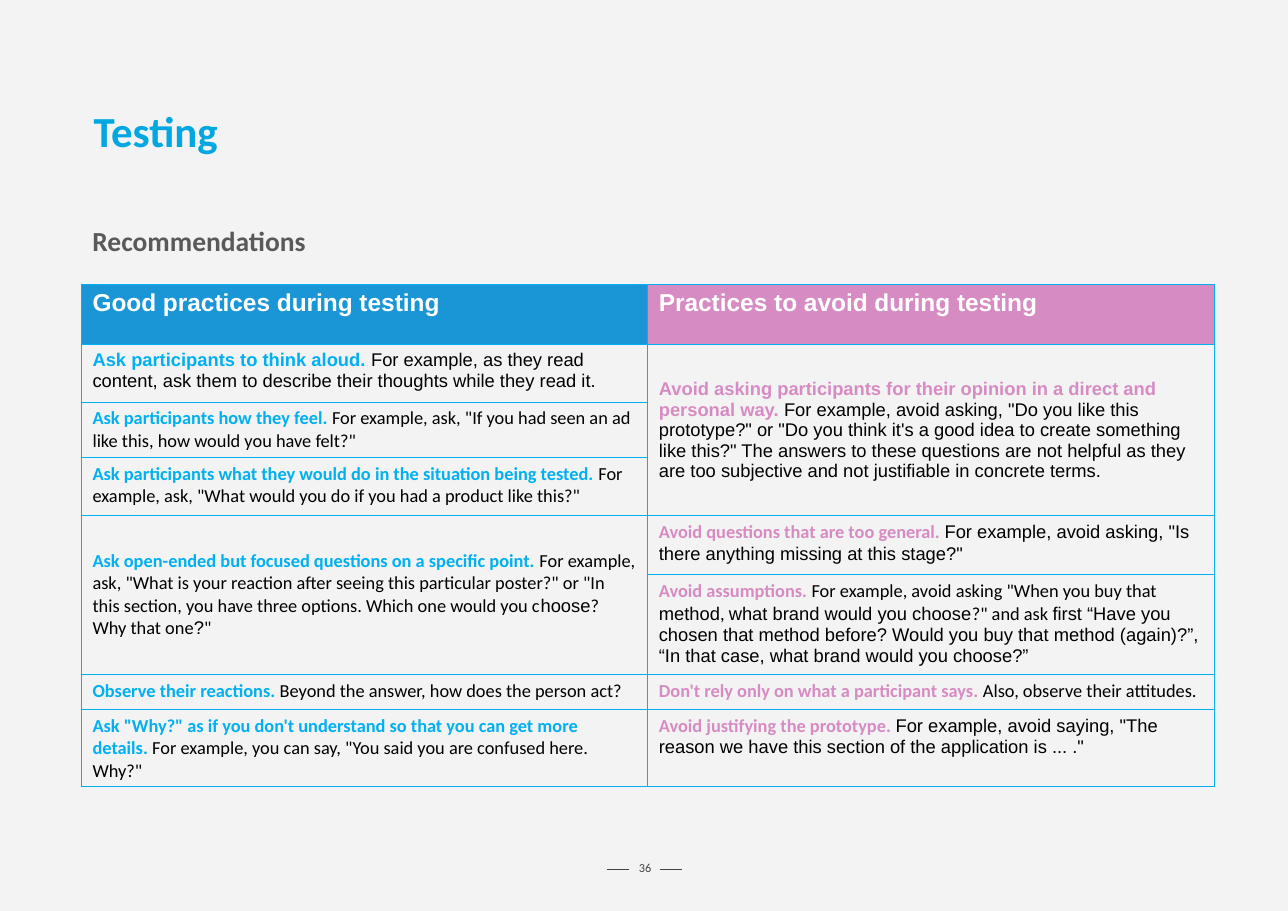
import dataclasses

import pptx
import pptx.dml.color
import pptx.enum.shapes
import pptx.enum.text
import pptx.oxml.ns
import pptx.util
from lxml import etree

Inches = pptx.util.Inches
ANCHOR = pptx.enum.text.MSO_ANCHOR
ALIGN = pptx.enum.text.PP_ALIGN


@dataclasses.dataclass(frozen=True)
class Theme:
    background: str = "F3F3F3"
    title: str = "00A7E1"
    subtitle: str = "595959"
    footer: str = "434343"
    body: str = "000000"
    white: str = "FFFFFF"
    good: str = "00B0F0"
    good_header: str = "1A96D7"
    avoid: str = "D78BC3"
    border: str = "00B0F0"
    sans: str = "Arial"
    humanist: str = "Calibri"
    title_size: int = 28
    subtitle_size: int = 18
    header_size: int = 16
    body_size: int = 12
    footer_size: int = 8
    line_width: float = 0.75


THEME = Theme()
SANS, HUMANIST = THEME.sans, THEME.humanist

COLUMN_WIDTH = 5.14
ROW_HEIGHTS = [0.55, 0.52, 0.49, 0.53, 0.54, 0.55, 0.32, 0.67]

# Each practice: first row, rows spanned, font of the lead, lead, then (text, font) runs.
GOOD_PRACTICES = [
    (1, 1, SANS, "Ask participants to think aloud. ", [
        ("For example, as they read content, ask them to describe their thoughts "
         "while they read it.", SANS)]),
    (2, 1, HUMANIST, "Ask participants how they feel. ", [
        ('For example, ask, "If you had seen an ad like this, how would you have felt?"',
         HUMANIST)]),
    (3, 1, HUMANIST, "Ask participants what they would do in the situation being tested. ", [
        ('For example, ask, "What would you do if you had a product like this?"', HUMANIST)]),
    (4, 2, HUMANIST, "Ask open-ended but focused questions on a specific point. ", [
        ('For example, ask, "What is your reaction after seeing this particular poster?" or '
         '"In this section, you have three options. Which one would you c', HUMANIST),
        ("hoose", SANS), ("? Why that one", HUMANIST), ("?", SANS), ('"', HUMANIST)]),
    (6, 1, HUMANIST, "Observe their reactions. ", [
        ("Beyond the answer, how does the person act?", HUMANIST)]),
    (7, 1, HUMANIST,
     'Ask "Why?" as if you don\'t understand so that you can get more details. ', [
         ('For example, you can say, "You said you are confused here. Why?"', HUMANIST)]),
]
PRACTICES_TO_AVOID = [
    (1, 3, SANS,
     "Avoid asking participants for their opinion in a direct and personal way. ", [
         ('For example, avoid asking, "Do you like this prototype?" or "Do you think it\'s a '
          'good idea to create something like this?" The answers to these questions are not '
          "helpful as they are too subjective and not justifiable in concrete terms.", SANS)]),
    (4, 1, HUMANIST, "Avoid questions that are too general. ", [
        ('For example, avoid asking, "Is there anything missing at this stage?"', SANS)]),
    (5, 1, HUMANIST, "Avoid assumptions. ", [
        ('For example, avoid asking "When you buy that ', HUMANIST), ("method", SANS),
        (", ", HUMANIST), ("what brand would you choose", SANS), ('?" and ask ', HUMANIST),
        ("first “Have you chosen that method before? Would you buy that method (again)?”, "
         "“In that case, what brand would you choose?”", SANS)]),
    (6, 1, HUMANIST, "Don't rely only on what a participant says. ", [
        ("Also, observe their attitudes.", HUMANIST)]),
    (7, 1, HUMANIST, "Avoid justifying the prototype. ", [
        ('For example, avoid saying, "The reason we have this section of the application '
         'is ... ."', SANS)]),
]
COLUMNS = [
    ("Good practices during testing", THEME.good_header, THEME.good, GOOD_PRACTICES),
    ("Practices to avoid during testing", THEME.avoid, THEME.avoid, PRACTICES_TO_AVOID),
]


def rgb(color):
    return pptx.dml.color.RGBColor.from_string(color)


def write(paragraph, text, *, font=HUMANIST, size=THEME.body_size, color=THEME.body, bold=False):
    run = paragraph.add_run()
    run.text = text
    run.font.name = font
    run.font.size = pptx.util.Pt(size)
    run.font.color.rgb = rgb(color)
    run.font.bold = bold


def set_insets(holder, horizontal, vertical, anchor=ANCHOR.TOP):
    """Set margins and anchor of a text frame or a table cell."""
    holder.margin_left = holder.margin_right = Inches(horizontal)
    holder.margin_top = holder.margin_bottom = Inches(vertical)
    holder.vertical_anchor = anchor


def place(shape, left, top, width, height):
    shape.left, shape.top = Inches(left), Inches(top)
    shape.width, shape.height = Inches(width), Inches(height)


def add_title(slide, text, *box):
    title = slide.shapes.title
    place(title, *box)
    frame = title.text_frame
    frame.word_wrap = True
    frame.auto_size = pptx.enum.text.MSO_AUTO_SIZE.NONE
    set_insets(frame, 0.11, 0.06, ANCHOR.MIDDLE)
    paragraph = frame.paragraphs[0]
    paragraph.alignment = ALIGN.LEFT
    paragraph.line_spacing = 0.86
    write(paragraph, text, size=THEME.title_size, color=THEME.title, bold=True)


def add_text_box(slide, box, anchor=ANCHOR.TOP):
    """Return the first paragraph of a new wrapped text box."""
    frame = slide.shapes.add_textbox(*map(Inches, box)).text_frame
    frame.word_wrap = True
    set_insets(frame, 0.1, 0.1, anchor)
    return frame.paragraphs[0]


def add_page_number(slide, number, left, top, width, height):
    paragraph = add_text_box(slide, (left, top, width, height), ANCHOR.MIDDLE)
    paragraph.alignment = ALIGN.CENTER
    paragraph.line_spacing = 0.8
    write(paragraph, number, size=THEME.footer_size, color=THEME.footer)
    middle = Inches(top + height / 2)
    for start in (left - 0.17, left + width - 0.04):
        dash = slide.shapes.add_connector(
            pptx.enum.shapes.MSO_CONNECTOR.STRAIGHT,
            Inches(start), middle, Inches(start + 0.2), middle)
        dash.line.color.rgb = rgb(THEME.footer)
        dash.line.width = pptx.util.Pt(THEME.line_width)
        etree.SubElement(dash._element.spPr, pptx.oxml.ns.qn("a:effectLst"))


def add_borders(cell):
    qn = pptx.oxml.ns.qn
    properties = cell._tc.get_or_add_tcPr()
    for side in ("a:lnL", "a:lnR", "a:lnT", "a:lnB"):
        line = etree.SubElement(properties, qn(side), w=str(pptx.util.Pt(THEME.line_width)))
        fill = etree.SubElement(line, qn("a:solidFill"))
        etree.SubElement(fill, qn("a:srgbClr"), val=THEME.border)


def add_practices_table(slide, left, top):
    frame = slide.shapes.add_table(
        len(ROW_HEIGHTS), len(COLUMNS), Inches(left), Inches(top),
        Inches(COLUMN_WIDTH * len(COLUMNS)), Inches(sum(ROW_HEIGHTS)))
    table = frame.table
    table.first_row = table.horz_banding = False
    for row, height in zip(table.rows, ROW_HEIGHTS):
        row.height = Inches(height)
    for cell in table.iter_cells():
        add_borders(cell)
        cell.fill.background()
        set_insets(cell, 0.1, 0.05)

    for index, (heading, header_fill, accent, practices) in enumerate(COLUMNS):
        table.columns[index].width = Inches(COLUMN_WIDTH)
        header = table.cell(0, index)
        header.fill.solid()
        header.fill.fore_color.rgb = rgb(header_fill)
        write(header.text_frame.paragraphs[0], heading, font=SANS,
              size=THEME.header_size, color=THEME.white, bold=True)
        for row, span, lead_font, lead, details in practices:
            cell = table.cell(row, index)
            if span > 1:
                cell.merge(table.cell(row + span - 1, index))
                cell.vertical_anchor = ANCHOR.MIDDLE
            paragraph = cell.text_frame.paragraphs[0]
            write(paragraph, lead, font=lead_font, color=accent, bold=True)
            for text, font in details:
                write(paragraph, text, font=font)


def main():
    presentation = pptx.Presentation()
    presentation.slide_width, presentation.slide_height = Inches(11.69), Inches(8.27)
    slide = presentation.slides.add_slide(presentation.slide_layouts[5])
    slide.background.fill.solid()
    slide.background.fill.fore_color.rgb = rgb(THEME.background)

    left = 0.74
    add_page_number(slide, "36", 5.68, 7.76, 0.35, 0.26)
    add_title(slide, "Testing", left, 0.83, 3.28, 0.77)
    write(add_text_box(slide, (left, 1.93, 6, 0.52)), "Recommendations",
          size=THEME.subtitle_size, color=THEME.subtitle, bold=True)
    add_practices_table(slide, left, 2.58)
    presentation.save("out.pptx")


if __name__ == "__main__":
    main()
